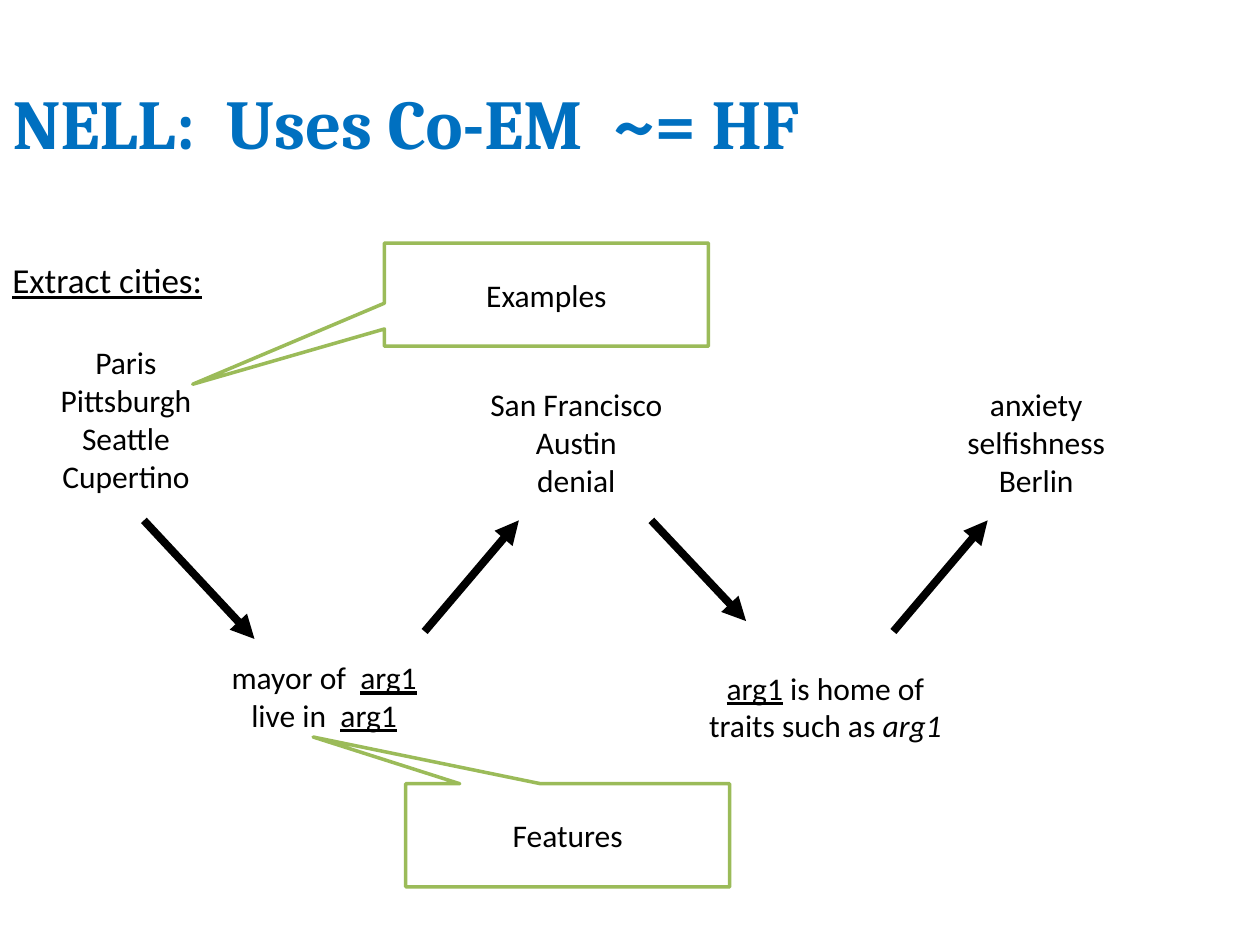
from lxml import etree
from pptx import Presentation
from pptx.dml.color import RGBColor
from pptx.enum.shapes import MSO_CONNECTOR, MSO_SHAPE
from pptx.enum.text import MSO_ANCHOR, MSO_AUTO_SIZE, PP_ALIGN
from pptx.oxml.ns import qn
from pptx.util import Cm, Pt

STRAIGHT = MSO_CONNECTOR.STRAIGHT
CALLOUT = MSO_SHAPE.RECTANGULAR_CALLOUT
MIDDLE = MSO_ANCHOR.MIDDLE
FIT_SHAPE, FIT_NONE = MSO_AUTO_SIZE.SHAPE_TO_FIT_TEXT, MSO_AUTO_SIZE.NONE
LEFT, CENTER = PP_ALIGN.LEFT, PP_ALIGN.CENTER

COLORS = {"title": "0070C0", "text": "000000", "paper": "FFFFFF", "callout": "9BBB59"}
TOP_ROW, ARROW_TOP, ARROW_BOTTOM = 7.62, 10.49, 12.73

EXAMPLES = [
    ((0.84, 6.78, 3.4, 3.33), ["Paris", "Pittsburgh", "Seattle", "Cupertino"]),
    ((9.32, TOP_ROW, 4.6, 2.57), ["San Francisco", "Austin", "denial"]),
    ((19.05, TOP_ROW, 3.68, 2.57), ["anxiety", "selfishness", "Berlin"]),
]
FEATURES = [
    ((4.39, 13.13, 4.29, 1.8),
     [[("mayor of  ", ""), ("arg1", "u")], [("live in  ", ""), ("arg1", "u")]]),
    ((14, 13.34, 5.28, 1.8),
     [[("arg1", "u"), (" is home of", "")], [("traits such as ", ""), ("arg1", "i")]]),
]
ARROWS = [
    (2.9, ARROW_TOP, 5.13, 12.88),
    (8.56, ARROW_BOTTOM, 10.46, ARROW_TOP),
    (13.13, ARROW_TOP, 15.04, 12.52),
    (18.01, ARROW_BOTTOM, 19.91, ARROW_TOP),
]
CALLOUTS = [
    ("Examples", 7.75, 4.9, (-1.092, 0.869)),
    ("Features", 8.18, 15.8, (-0.786, -0.953)),
]


def rgb(name):
    """Return the named colour."""
    return RGBColor.from_string(COLORS[name])


def style_run(r, size, font="Calibri", color="text"):
    """Set the size, font and colour of a run."""
    r.font.size = Pt(size)
    r.font.name = font
    r.font.color.rgb = rgb(color)


def add_title(s, text):
    """Place and format the title placeholder."""
    sp = s.shapes.title
    sp.left, sp.top, sp.width, sp.height = Cm(0), Cm(1.27), Cm(24.69), Cm(2.34)
    tf = sp.text_frame
    tf.text = text
    tf.vertical_anchor = MIDDLE
    tf.auto_size = FIT_NONE
    p = tf.paragraphs[0]
    p.alignment = LEFT
    style_run(p.runs[0], 40, "Cambria", "title")
    p.runs[0].font.bold = True


def add_label(s, box, lines, size=18, align=CENTER, wrap=False):
    """Add a text box whose lines are lists of (text, style) pairs."""
    tf = s.shapes.add_textbox(*map(Cm, box)).text_frame
    tf.word_wrap = wrap
    tf.auto_size = FIT_SHAPE
    tf.vertical_anchor = MIDDLE
    for i, line in enumerate(lines):
        p = tf.add_paragraph() if i else tf.paragraphs[0]
        p.alignment = align
        for text, style in line:
            r = p.add_run()
            r.text = text
            style_run(r, size)
            r.font.underline = style == "u"
            r.font.italic = style == "i"


def add_arrow(s, ends):
    """Add a thick arrow between two points."""
    cxn = s.shapes.add_connector(STRAIGHT, *map(Cm, ends))
    cxn.line.width = Pt(4.5)
    cxn.line.color.rgb = rgb("text")
    etree.SubElement(cxn.line._get_or_add_ln(), qn("a:tailEnd"), type="triangle")
    etree.SubElement(cxn._element.spPr, qn("a:effectLst"))


def add_callout(s, text, left, top, tip):
    """Add a callout whose tip is given relative to its size."""
    sp = s.shapes.add_shape(CALLOUT, Cm(left), Cm(top), Cm(6.53), Cm(2.08))
    sp.shadow.inherit = False
    sp.adjustments[0], sp.adjustments[1] = tip
    sp.fill.solid()
    sp.fill.fore_color.rgb = rgb("paper")
    sp.line.color.rgb = rgb("callout")
    sp.line.width = Pt(2)
    tf = sp.text_frame
    tf.text = text
    tf.vertical_anchor = MIDDLE
    p = tf.paragraphs[0]
    p.alignment = CENTER
    style_run(p.runs[0], 18)


def main():
    """Build the slide and save it."""
    prs = Presentation()
    prs.slide_width, prs.slide_height = Cm(25.4), Cm(19.05)
    s = prs.slides.add_slide(prs.slide_layouts[5])
    add_title(s, "NELL:  Uses Co-EM  ~= HF")
    add_label(s, (0, 5.08, 4.88, 1.12), [[("Extract cities:", "u")]], 20, LEFT, True)
    for box, words in EXAMPLES:
        add_label(s, box, [[(word, "")] for word in words])
    for box, lines in FEATURES:
        add_label(s, box, lines)
    for ends in ARROWS:
        add_arrow(s, ends)
    for callout in CALLOUTS:
        add_callout(s, *callout)
    prs.save("out.pptx")


if __name__ == "__main__":
    main()
